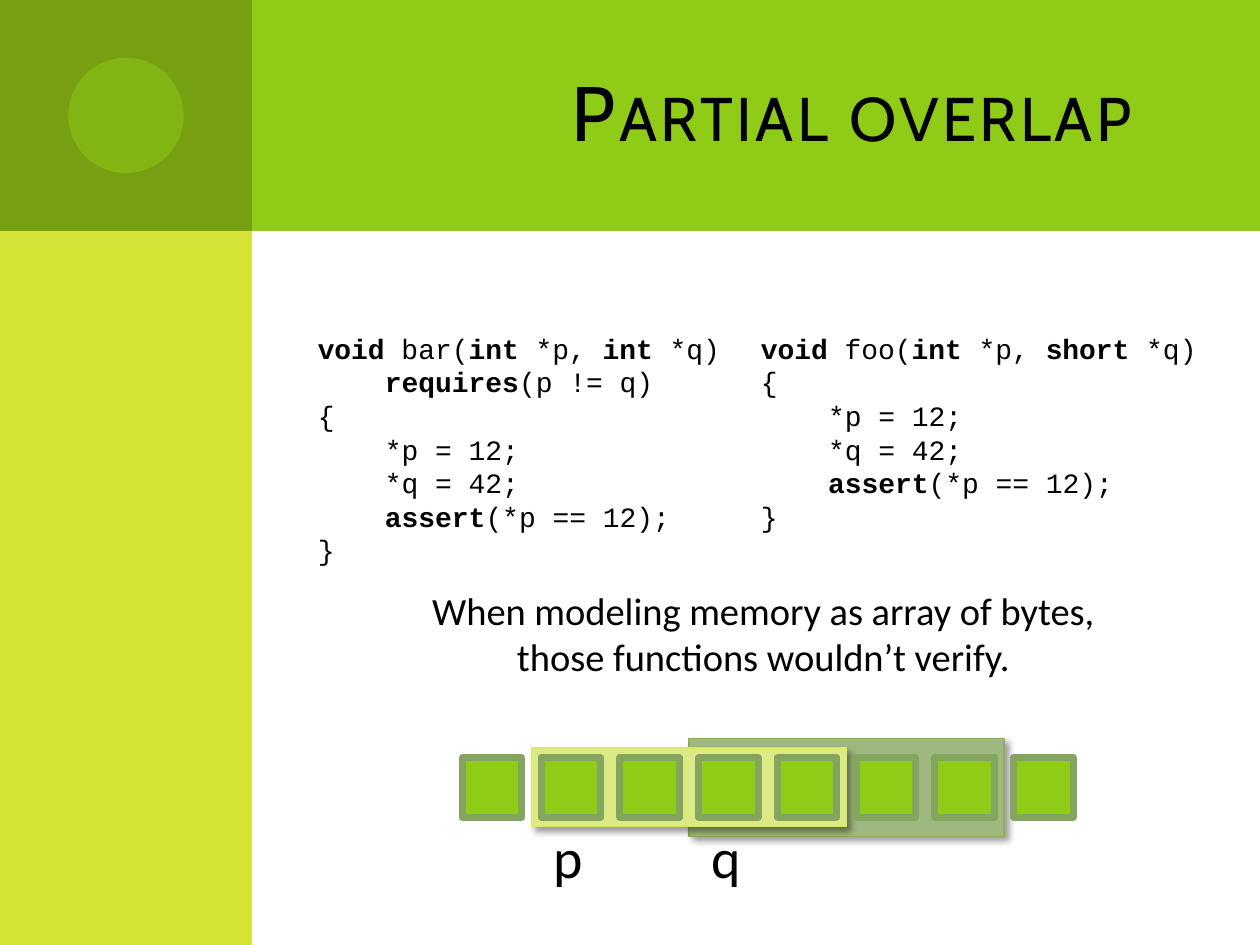
from dataclasses import dataclass

from lxml.etree import SubElement
from pptx import Presentation
from pptx.dml.color import RGBColor
from pptx.enum.shapes import MSO_SHAPE as SHAPE
from pptx.enum.text import MSO_ANCHOR as ANCHOR, PP_ALIGN as ALIGN
from pptx.oxml.ns import qn
from pptx.util import Pt


@dataclass(frozen=True)
class Theme:
    green: str = "8FCB17"
    lime: str = "D4E336"
    olive: str = "769F11"
    p_fill: str = "DDE985"
    p_line: str = "DBE964"
    q_fill: str = "9FB87F"
    q_line: str = "8DAE5C"
    cell_line: str = "84A55E"
    ink: str = "000000"
    title: int = 44
    label: int = 32
    body: int = 22
    code: int = 16
    title_font: str = "Cabin"
    body_font: str = "Calibri"
    code_font: str = "Courier New"


T = Theme()

BAR = [
    "`void` bar(`int` *p, `int` *q)",
    "\t`requires`(p != q)",
    "{",
    "\t*p = 12;",
    "\t*q = 42;",
    "\t`assert`(*p == 12);",
    "}",
]
FOO = [
    "`void` foo(`int` *p, `short` *q)",
    "{",
    "\t*p = 12;",
    "\t*q = 42;",
    "\t`assert`(*p == 12);",
    "}",
]


def add_box(slide, x, y, w, h, fill, line=None, weight=0.75, kind=SHAPE.RECTANGLE):
    sp = slide.shapes.add_shape(kind, Pt(x), Pt(y), Pt(w), Pt(h))
    sp.fill.solid()
    sp.fill.fore_color.rgb = RGBColor.from_string(fill)
    if line:
        sp.line.color.rgb = RGBColor.from_string(line)
        sp.line.width = Pt(weight)
    else:
        sp.line.fill.background()
    sp.shadow.inherit = False
    return sp


def add_alpha(color, percent):
    SubElement(color, qn("a:alpha"), val=str(percent * 1000))


def add_shadow(sp):
    effects = sp._element.spPr.find(qn("a:effectLst"))
    shadow = SubElement(effects, qn("a:outerShdw"), blurRad=str(Pt(4)),
                        dist=str(Pt(3)), dir=str(45 * 60000), rotWithShape="0")
    add_alpha(SubElement(shadow, qn("a:srgbClr"), val=T.ink), 40)


def add_run(p, text, style):
    r = p.add_run()
    r.text = text
    for key, value in style.items():
        setattr(r.font, key, value)
    r.font.color.rgb = RGBColor.from_string(T.ink)


def add_text(slide, x, y, w, h, lines, size, font, align=ALIGN.LEFT,
             anchor=ANCHOR.TOP, wrap=True):
    tf = slide.shapes.add_textbox(Pt(x), Pt(y), Pt(w), Pt(h)).text_frame
    tf.word_wrap = wrap
    tf.vertical_anchor = anchor
    style = {"size": Pt(size), "name": font}
    for i, line in enumerate(lines):
        p = tf.add_paragraph() if i else tf.paragraphs[0]
        p.alignment = align
        if line.startswith("\t"):
            p._p.get_or_add_pPr().set("marL", str(Pt(4 * 0.6 * size)))
        for j, part in enumerate(line.strip("\t").split("`")):
            for k, piece in enumerate(part.split("\n")):
                if k:
                    p.add_line_break()
                if piece:
                    add_run(p, piece, {**style, "bold": j % 2 == 1})
    return tf


def add_frame(slide, x, y, w, h, side=144, band=132):
    add_box(slide, x + side, y, w - side, band, T.green)
    add_box(slide, x, y + band, side, h - band, T.lime)
    add_box(slide, x, y, side, band, T.olive)
    d = 66
    dot = add_box(slide, x + (side - d) / 2, y + (band - d) / 2, d, d,
                  T.green, kind=SHAPE.OVAL)
    add_alpha(dot._element.spPr.find(".//" + qn("a:srgbClr")), 50)


def add_title(slide, x, y, w, h, text):
    tf = add_text(slide, x, y, w, h, [text], T.title, T.title_font,
                  ALIGN.RIGHT, ANCHOR.MIDDLE)
    rPr = tf.paragraphs[0].runs[0].font._element
    for key, value in {"cap": "small", "spc": "200"}.items():
        rPr.set(key, value)


def add_code(slide, x, y, w, h, lines):
    add_text(slide, x, y, w, h, lines, T.code, T.code_font, wrap=False)


def add_memory(slide, x, y, w, h, count=8, cell=34):
    pitch = (w - cell) / (count - 1)
    middle = y + h / 2
    pad = (pitch - cell) / 2
    spans = [("q", 3, 56, T.q_fill, T.q_line), ("p", 1, 45, T.p_fill, T.p_line)]
    for name, first, height, fill, line in spans:
        left = x + first * pitch
        add_shadow(add_box(slide, left - pad, middle - height / 2, 4 * pitch,
                           height, fill, line))
        add_text(slide, left, middle + 16.5, 32, 46, [name], T.label, T.body_font)
    for i in range(count):
        add_box(slide, x + i * pitch, middle - cell / 2, cell, cell,
                T.green, T.cell_line, 4)


def main():
    prs = Presentation()
    prs.slide_width, prs.slide_height = Pt(720), Pt(540)
    slide = prs.slides.add_slide(prs.slide_layouts[6])
    add_frame(slide, 0, 0, 720, 540)
    add_title(slide, 192, 18, 492, 90, "Partial overlap")
    add_text(slide, 191.5, 332, 489.5, 73.5,
             ["When modeling memory as array of bytes,\n"
              "those functions wouldn’t verify."],
             T.body, T.body_font, ALIGN.CENTER)
    add_code(slide, 174.5, 185.8, 247.5, 143.5, BAR)
    add_code(slide, 427.7, 185.8, 267, 128, FOO)
    add_memory(slide, 264.25, 422, 349, 56)
    prs.save("out.pptx")


if __name__ == "__main__":
    main()
